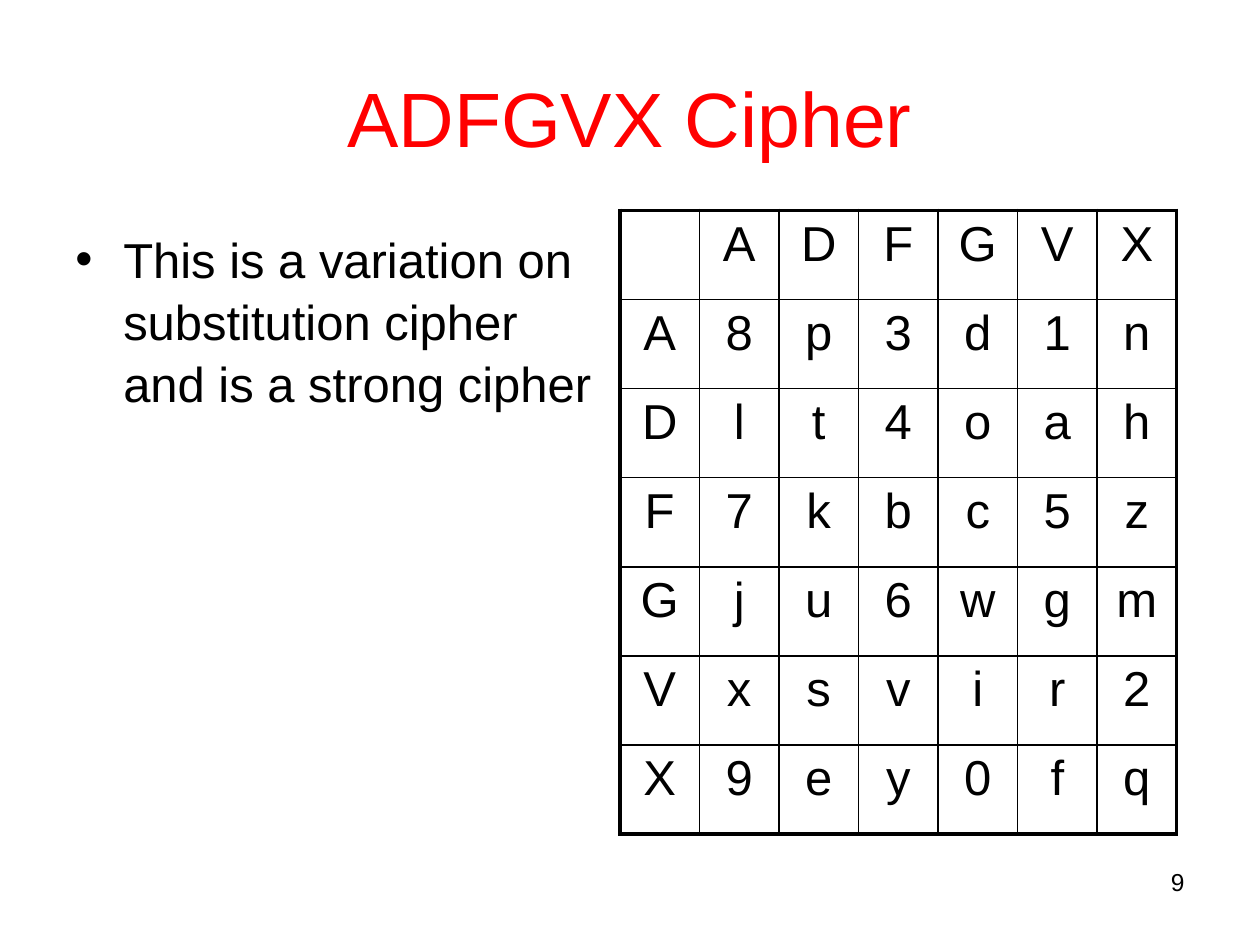
from lxml.etree import SubElement
from pptx import Presentation
from pptx.dml.color import RGBColor
from pptx.enum.text import MSO_ANCHOR as Anchor, PP_ALIGN as Align
from pptx.oxml.ns import qn
from pptx.util import Inches, Pt

BLACK, RED, WHITE = "000000", "FF0000", "FFFFFF"
FONT = "Arial"
THIN, THICK = 1, 2.25
KEYS = "ADFGVX"
SQUARE = ["8p3d1n", "lt4oah", "7kbc5z", "ju6wgm", "xsvir2", "9ey0fq"]


def color(code):
    return RGBColor.from_string(code)


def style(para, size, align, code=BLACK):
    para.alignment = align
    para.font.name = FONT
    para.font.size = Pt(size)
    para.font.color.rgb = color(code)


def add_title(page, text):
    title = page.shapes.title
    title.left, title.top = Inches(0.5), Inches(0.3)
    title.width, title.height = Inches(9), Inches(1.25)
    title.text_frame.vertical_anchor = Anchor.MIDDLE
    title.text_frame.text = text
    style(title.text_frame.paragraphs[0], 44, Align.CENTER, RED)


def add_text(page, text, left, top, width, height, size, align=Align.LEFT):
    box = page.shapes.add_textbox(Inches(left), Inches(top),
                                  Inches(width), Inches(height))
    box.text_frame.word_wrap = True
    para = box.text_frame.paragraphs[0]
    para.text = text
    style(para, size, align)
    return para


def add_bullet(para, indent):
    props = para._p.get_or_add_pPr()
    props.set("marL", str(Inches(indent)))
    props.set("indent", str(-Inches(indent)))
    SubElement(props, qn("a:buFont"), typeface=FONT)
    SubElement(props, qn("a:buChar"), char="•")


def set_borders(cell, widths):
    """Draw the left, right, top and bottom borders, in points."""
    props = cell._tc.get_or_add_tcPr()
    for side, width in zip(("lnL", "lnR", "lnT", "lnB"), widths):
        line = SubElement(props, qn(f"a:{side}"), w=str(Pt(width)))
        fill = SubElement(line, qn("a:solidFill"))
        SubElement(fill, qn("a:srgbClr"), val=BLACK)


def add_grid(page, rows, left, top, width, height):
    count = len(rows)
    last = count - 1
    table = page.shapes.add_table(count, count, Inches(left), Inches(top),
                                  Inches(width), Inches(height)).table
    table.first_row = table.horz_banding = False
    for r, letters in enumerate(rows):
        for c, letter in enumerate(letters):
            cell = table.cell(r, c)
            # Only the outer edges of the grid are thick
            edges = (c == 0, c == last, r == 0, r == last)
            set_borders(cell, [THICK if edge else THIN for edge in edges])
            cell.fill.solid()
            cell.fill.fore_color.rgb = color(WHITE)
            para = cell.text_frame.paragraphs[0]
            para.text = letter.strip()
            style(para, 28, Align.CENTER)


def main():
    deck = Presentation()
    deck.slide_width, deck.slide_height = Inches(10), Inches(7.5)
    page = deck.slides.add_slide(deck.slide_layouts[5])

    add_title(page, "ADFGVX Cipher")

    # Explanation on the left
    point = add_text(
        page, "This is a variation on substitution cipher and is a strong cipher",
        0.5, 1.75, 4.42, 4.95, 28)
    point.line_spacing = 1.05
    add_bullet(point, 0.38)

    # Key square: row and column keys around the substituted characters
    rows = [" " + KEYS] + [key + line for key, line in zip(KEYS, SQUARE)]
    add_grid(page, rows, 4.92, 1.67, 4.42, 4.95)

    # Page number
    add_text(page, "9", 7.17, 6.83, 2.33, 0.52, 14, Align.RIGHT)

    deck.save("out.pptx")


if __name__ == "__main__":
    main()
